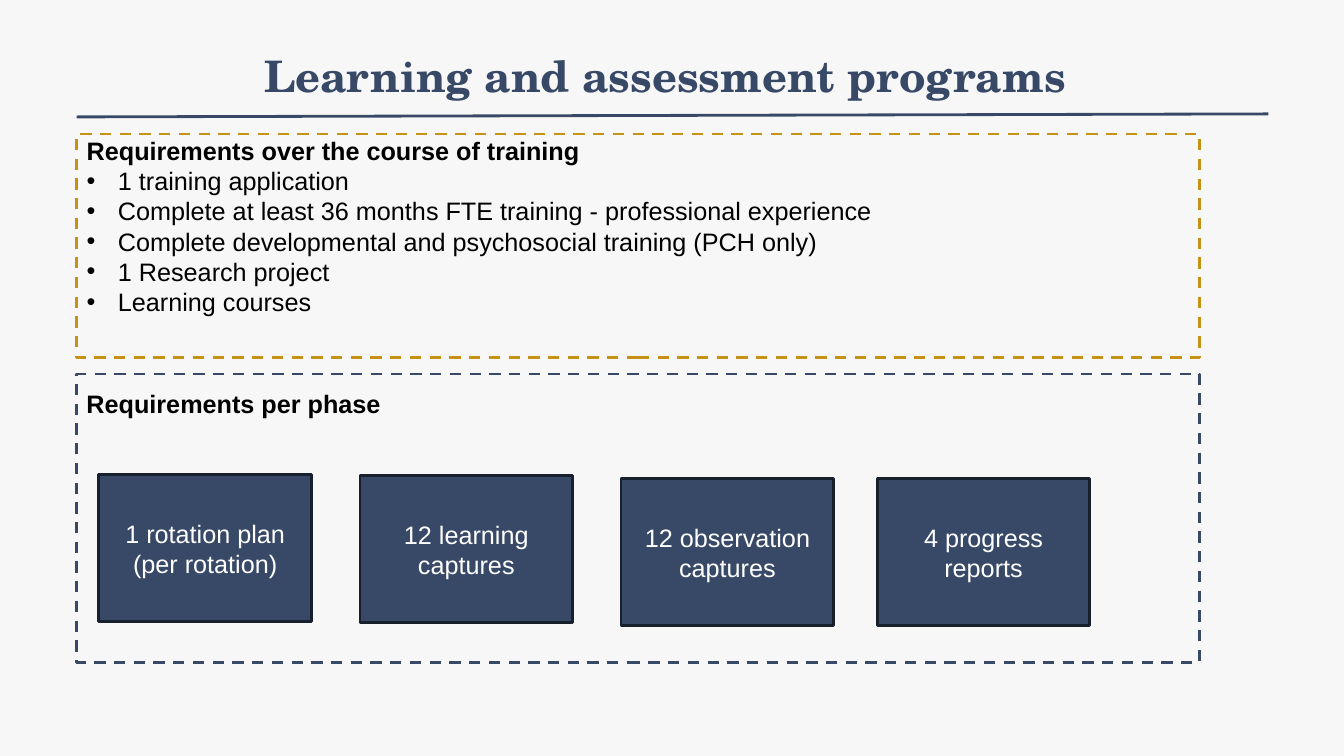
"""Build the slide on learning and assessment programs."""
from lxml import etree
from pptx import Presentation
from pptx import util as u
from pptx.dml.color import RGBColor
from pptx.enum import dml, shapes, text
from pptx.oxml import ns

HUES = {"back": "F7F7F7", "navy": "384967", "gold": "C69214",
        "edge": "19202D", "black": "000000", "white": "FFFFFF"}
LEFT, WIDE = 0.76, 11.14
TASKS = ["1 training application",
         "Complete at least 36 months FTE training - professional experience",
         "Complete developmental and psychosocial training (PCH only)",
         "1 Research project",
         "Learning courses"]
CARDS = [(0.98, 4.71, "1 rotation plan (per rotation)"),
         (3.57, 4.72, "12 learning captures"),
         (6.16, 4.75, "12 observation captures"),
         (8.7, 4.75, "4 progress reports")]


def style(para, hue, size=18, bold=False, face="Arial"):
    font = para.font
    font.name, font.size, font.bold = face, u.Pt(size), bold
    font.color.rgb = RGBColor.from_string(HUES[hue])


def panel(left, top, width, height, line, fill=None):
    box = slide.shapes.add_shape(shapes.MSO_SHAPE.RECTANGLE,
                                 *map(u.Inches, (left, top, width, height)))
    box.shadow.inherit = False
    box.line.color.rgb = RGBColor.from_string(HUES[line])
    box.line.width = u.Pt(2)
    if fill:
        box.fill.solid()
        box.fill.fore_color.rgb = RGBColor.from_string(HUES[fill])
    else:
        box.fill.background()
        box.line.dash_style = dml.MSO_LINE.DASH
    return box


deck = Presentation()
deck.slide_width, deck.slide_height = u.Inches(13.33), u.Inches(7.5)
slide = deck.slides.add_slide(deck.slide_layouts[1])
slide.background.fill.solid()
slide.background.fill.fore_color.rgb = RGBColor.from_string(HUES["back"])

title, body = slide.placeholders
for hold, spot in ((title, (1.59, 0.29, 10.01, 0.91)),
                   (body, (LEFT, 1.29, 9.84, 1.92))):
    hold.left, hold.top, hold.width, hold.height = map(u.Inches, spot)
    hold.text_frame.auto_size = text.MSO_AUTO_SIZE.NONE

title.text_frame.text = "Learning and assessment programs"
title.text_frame.vertical_anchor = text.MSO_ANCHOR.MIDDLE
head = title.text_frame.paragraphs[0]
head.alignment = text.PP_ALIGN.CENTER
style(head, "navy", 31, True, "TeX Gyre Schola")

rule = slide.shapes.add_connector(shapes.MSO_CONNECTOR.STRAIGHT,
                                  *map(u.Inches, (LEFT, 1.16, 12.58, 1.13)))
rule.line.color.rgb = RGBColor.from_string(HUES["navy"])
rule.line.width = u.Pt(2)
etree.SubElement(rule._element.spPr, ns.qn("a:effectLst"))

panel(LEFT, 1.33, WIDE, 2.22, "gold")
panel(LEFT, 3.71, WIDE, 2.86, "navy")

body.text_frame.text = "\n".join(["Requirements over the course of training"] + TASKS)
for row, para in enumerate(body.text_frame.paragraphs):
    props = para._p.get_or_add_pPr()
    inset = u.Inches(0.31) if row else 0
    props.set("marL", str(inset))
    props.set("indent", str(-inset))
    if row:
        etree.SubElement(props, ns.qn("a:buFont"), typeface="Arial")
        etree.SubElement(props, ns.qn("a:buChar"), char="•")
    else:
        etree.SubElement(props, ns.qn("a:buNone"))
    para.space_before = u.Pt(0)
    style(para, "black", bold=row == 0)

phase = slide.shapes.add_textbox(*map(u.Inches, (LEFT, 3.8, 6.67, 0.4))).text_frame
phase.word_wrap = True
phase.text = "Requirements per phase"
style(phase.paragraphs[0], "black", bold=True)

for left, top, label in CARDS:
    frame = panel(left, top, 2.11, 1.46, "edge", "navy").text_frame
    frame.word_wrap = True
    frame.vertical_anchor = text.MSO_ANCHOR.MIDDLE
    frame.text = label
    frame.paragraphs[0].alignment = text.PP_ALIGN.CENTER
    style(frame.paragraphs[0], "white")

deck.save("out.pptx")
